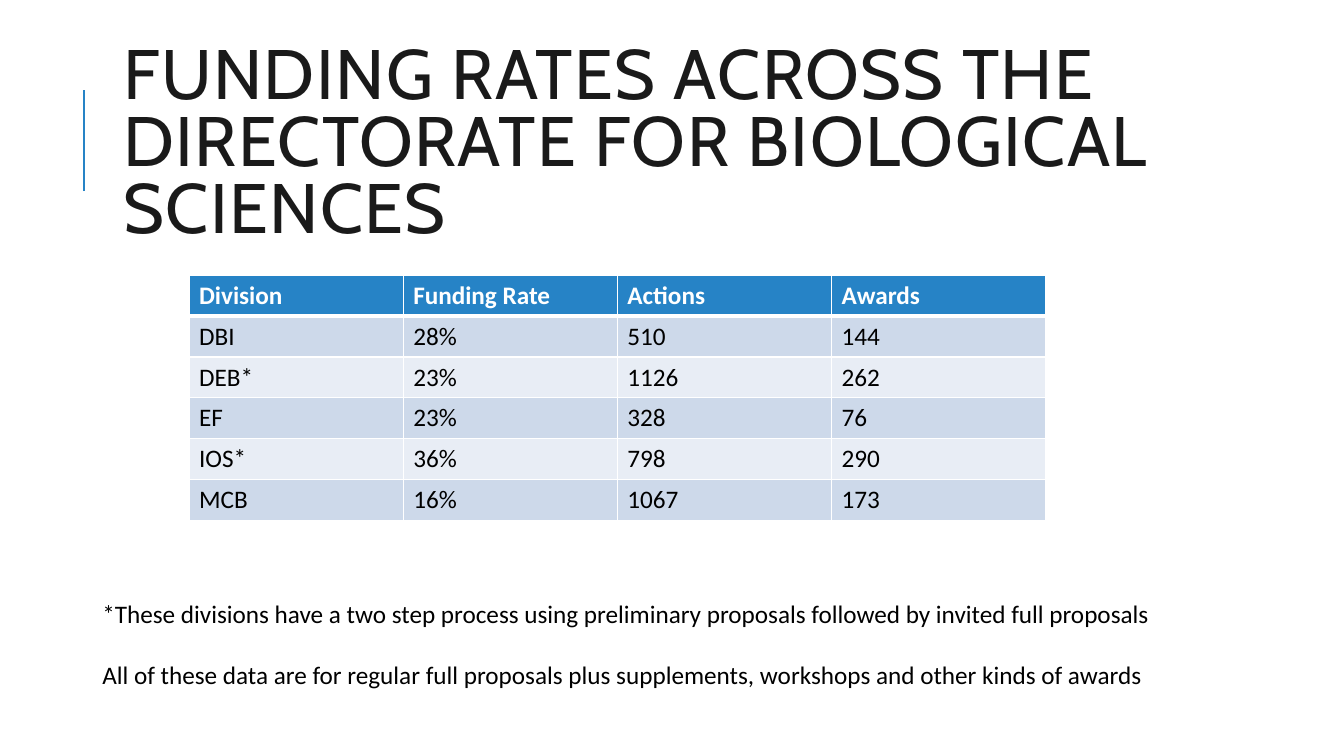
import pptx
import pptx.util
import pptx.dml.color
import pptx.enum.shapes
import pptx.enum.text
import pptx.oxml
import pptx.oxml.ns
import lxml.etree

PX = 9525
COLORS = {
    "accent": "2683C6",
    "title": "1A1A1A",
    "text": "000000",
    "white": "FFFFFF",
    "band_dark": "CDD9EA",
    "band_light": "E8EDF5",
}
FORMATS = {
    "title": {"name": "Cabin", "size": pptx.util.Pt(50), "bold": False},
    "header": {"name": "Calibri", "size": pptx.util.Pt(18), "bold": True},
    "body": {"name": "Calibri", "size": pptx.util.Pt(18), "bold": False},
}
ROWS = [
    ["Division", "Funding Rate", "Actions", "Awards"],
    ["DBI", "28%", "510", "144"],
    ["DEB*", "23%", "1126", "262"],
    ["EF", "23%", "328", "76"],
    ["IOS*", "36%", "798", "290"],
    ["MCB", "16%", "1067", "173"],
]
NOTES = [
    "*These divisions have a two step process using preliminary proposals followed by invited full proposals",
    "All of these data are for regular full proposals plus supplements, workshops and other kinds of awards",
]
COLUMN_WIDTH = 204
ROW_HEIGHT = 39


def rgb(name):
    return pptx.dml.color.RGBColor.from_string(COLORS[name])


def add_span(para, text, style, color):
    span = para.add_run()
    span.text = text
    for key, value in FORMATS[style].items():
        setattr(span.font, key, value)
    span.font.color.rgb = rgb(color)
    return span


deck = pptx.Presentation()
deck.slide_width = 1280 * PX
deck.slide_height = 720 * PX
page = deck.slides.add_slide(deck.slide_layouts[6])
page.background.fill.solid()
page.background.fill.fore_color.rgb = rgb("white")

rule = page.shapes.add_connector(
    pptx.enum.shapes.MSO_CONNECTOR.STRAIGHT, 80 * PX, 182 * PX, 80 * PX, 86 * PX)
rule.line.color.rgb = rgb("accent")
rule.line.width = pptx.util.Pt(1.5)
lxml.etree.SubElement(rule._element.spPr, pptx.oxml.ns.qn("a:effectLst"))

title_box = page.shapes.add_textbox(108 * PX, 61 * PX, 1020 * PX, 157 * PX)
title_box.text_frame.word_wrap = True
title_box.text_frame.vertical_anchor = pptx.enum.text.MSO_ANCHOR.MIDDLE
title_para = title_box.text_frame.paragraphs[0]
title_para.line_spacing = 0.8
title_span = add_span(
    title_para, "FUNDING RATES ACROSS THE DIRECTORATE FOR BIOLOGICAL SCIENCES", "title", "title")
title_span.font._element.set("spc", "100")

table = page.shapes.add_table(
    len(ROWS), len(ROWS[0]), 180 * PX, 262 * PX,
    len(ROWS[0]) * COLUMN_WIDTH * PX, len(ROWS) * ROW_HEIGHT * PX).table
for row_index, values in enumerate(ROWS):
    is_header = row_index == 0
    style, color = ("header", "white") if is_header else ("body", "text")
    band = "accent" if is_header else ("band_light", "band_dark")[row_index % 2]
    for column_index, value in enumerate(values):
        cell = table.cell(row_index, column_index)
        cell.vertical_anchor = pptx.enum.text.MSO_ANCHOR.MIDDLE
        cell.fill.solid()
        cell.fill.fore_color.rgb = rgb(band)
        add_span(cell.text_frame.paragraphs[0], value, style, color)
        top_width = 3 if row_index == 1 else 1
        bottom_width = 3 if is_header else 1
        borders = [("lnL", 1), ("lnR", 1), ("lnT", top_width), ("lnB", bottom_width)]
        for position, (side, width) in enumerate(borders):
            border = pptx.oxml.parse_xml(
                f'<a:{side} {pptx.oxml.ns.nsdecls("a")} w="{pptx.util.Pt(width)}"><a:solidFill>'
                f'<a:srgbClr val="{COLORS["white"]}"/></a:solidFill></a:{side}>')
            cell._tc.get_or_add_tcPr().insert(position, border)

notes_box = page.shapes.add_textbox(88 * PX, 565 * PX, 1086 * PX, 97 * PX)
notes_box.text_frame.word_wrap = True
for index, note in enumerate(NOTES):
    para = notes_box.text_frame.add_paragraph() if index else notes_box.text_frame.paragraphs[0]
    para.space_before = pptx.util.Pt(22 * index)
    add_span(para, note, "body", "text")

deck.save("out.pptx")
